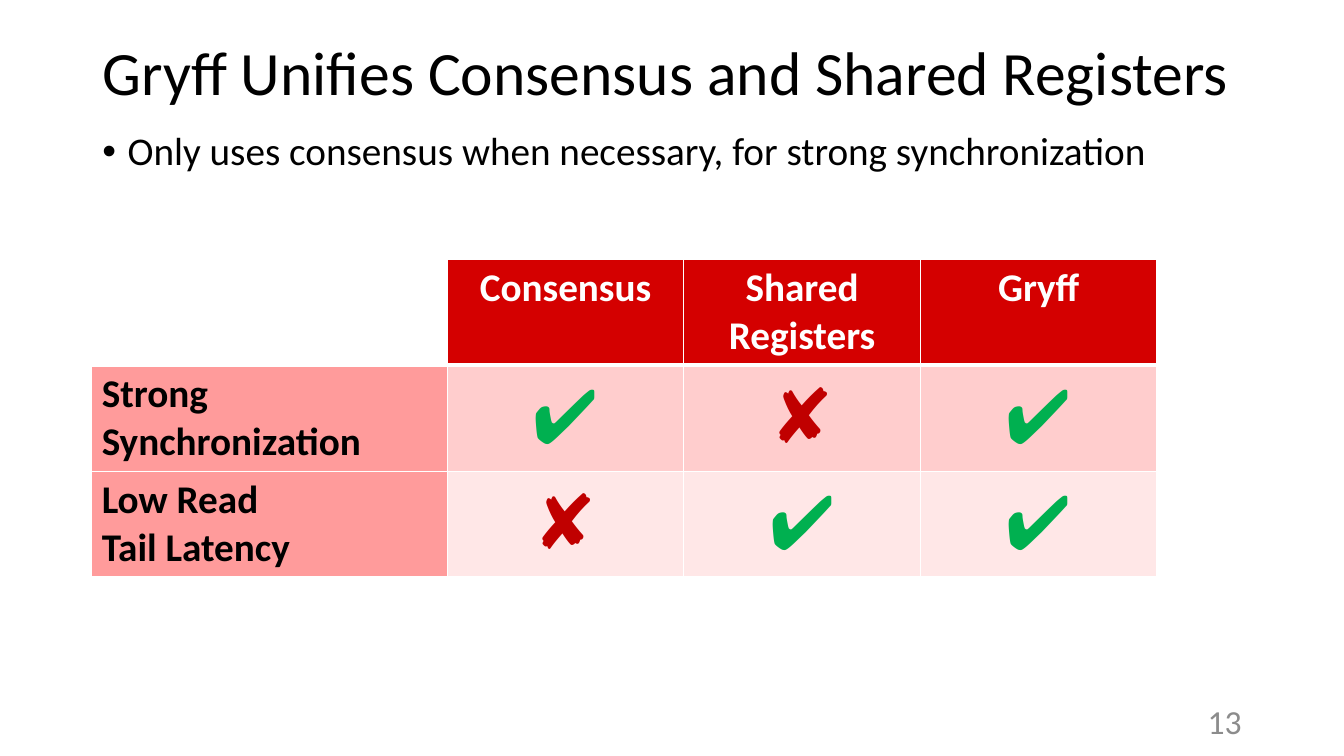
from lxml import etree
from pptx import Presentation
from pptx.dml.color import RGBColor
from pptx.enum.text import MSO_ANCHOR, MSO_AUTO_SIZE, PP_ALIGN
from pptx.oxml.ns import qn
from pptx.util import Pt

LEFT, CENTER, RIGHT = PP_ALIGN.LEFT, PP_ALIGN.CENTER, PP_ALIGN.RIGHT
TOP, MIDDLE = MSO_ANCHOR.TOP, MSO_ANCHOR.MIDDLE
NO_AUTOFIT = MSO_AUTO_SIZE.NONE

FONT = "Calibri"
BLACK = RGBColor(0x00, 0x00, 0x00)
WHITE = RGBColor(0xFF, 0xFF, 0xFF)
GRAY = RGBColor(0x8C, 0x8C, 0x8C)
HEADER_RED = RGBColor(0xD4, 0x00, 0x00)
LABEL_PINK = RGBColor(0xFF, 0x9B, 0x9B)
BAND_PINKS = (RGBColor(0xFF, 0xCD, 0xCD), RGBColor(0xFF, 0xE7, 0xE7))
CHECK, CROSS = "✔", "✘"
MARK_COLORS = {CHECK: RGBColor(0x00, 0xB0, 0x50), CROSS: RGBColor(0xC0, 0x00, 0x00)}

HEADERS = ("Consensus", "Shared Registers", "Gryff")
PROPERTIES = (
    ("Strong Synchronization", (CHECK, CROSS, CHECK)),
    ("Low Read\nTail Latency", (CROSS, CHECK, CHECK)),
)
COLUMN_WIDTHS = (254, 169, 169, 169)
ROW_HEIGHT = 75.6


def place(shape, left, top, width, height):
    shape.left, shape.top = Pt(left), Pt(top)
    shape.width, shape.height = Pt(width), Pt(height)


def write(frame, text, size, color, align=LEFT, bold=False):
    frame.text = text
    for para in frame.paragraphs:
        para.alignment = align
        font = para.font
        font.name, font.size, font.bold = FONT, Pt(size), bold
        font.color.rgb = color


def fill_box(box, text, size, color, anchor, align=LEFT):
    frame = box.text_frame
    frame.word_wrap = True
    frame.auto_size = NO_AUTOFIT
    frame.vertical_anchor = anchor
    write(frame, text, size, color, align)
    return frame.paragraphs[0]


def add_borders(cell, widths):
    properties = cell._tc.get_or_add_tcPr()
    for side, width in widths.items():
        line = etree.SubElement(properties, qn(f"a:ln{side}"), w=str(Pt(width)))
        solid = etree.SubElement(line, qn("a:solidFill"))
        etree.SubElement(solid, qn("a:srgbClr"), val=str(WHITE))


def fill_cell(cell, text, size, color, fill, align, bold=True, anchor=TOP):
    cell.fill.solid()
    cell.fill.fore_color.rgb = fill
    cell.vertical_anchor = anchor
    write(cell.text_frame, text, size, color, align, bold)


def add_comparison(page):
    frame = page.shapes.add_table(
        len(PROPERTIES) + 1, len(COLUMN_WIDTHS), Pt(65.5), Pt(185.2),
        Pt(sum(COLUMN_WIDTHS)), Pt(ROW_HEIGHT * (len(PROPERTIES) + 1)))
    table = frame.table
    for column, width in zip(table.columns, COLUMN_WIDTHS):
        column.width = Pt(width)
    for index, row in enumerate(table.rows):
        row.height = Pt(ROW_HEIGHT)
        for cell in row.cells:
            add_borders(cell, {"L": 1, "R": 1, "T": 3 if index == 1 else 1,
                               "B": 3 if index == 0 else 1})
    table.cell(0, 0).fill.background()
    for column, header in enumerate(HEADERS, 1):
        fill_cell(table.cell(0, column), header, 28, WHITE, HEADER_RED, CENTER)
    for row, (label, marks) in enumerate(PROPERTIES, 1):
        fill_cell(table.cell(row, 0), label, 28, BLACK, LABEL_PINK, LEFT)
        for column, mark in enumerate(marks, 1):
            fill_cell(table.cell(row, column), mark, 54, MARK_COLORS[mark],
                      BAND_PINKS[row - 1], CENTER, False, MIDDLE)


def add_title(page):
    title = page.shapes.title
    place(title, 66, 1.5, 828, 104.5)
    para = fill_box(title, "Gryff Unifies Consensus and Shared Registers", 44, BLACK, MIDDLE)
    para.line_spacing = 0.9


def add_body(page):
    body = page.placeholders[1]
    place(body, 66, 90.5, 828, 343)
    para = fill_box(body, "Only uses consensus when necessary, for strong synchronization",
                    28, BLACK, TOP)
    para.line_spacing = 0.9
    para.space_before = Pt(10)
    properties = para._p.get_or_add_pPr()
    properties.set("marL", str(Pt(18)))
    properties.set("indent", str(-Pt(18)))
    etree.SubElement(properties, qn("a:buFont"), typeface="Arial")
    etree.SubElement(properties, qn("a:buChar"), char="•")
    para.font.size = Pt(28)
    defaults = properties.find(qn("a:defRPr"))
    properties.append(defaults)


def add_page_number(page):
    box = page.shapes.add_textbox(Pt(678), Pt(500.5), Pt(216), Pt(28.75))
    fill_box(box, "13", 24, GRAY, MIDDLE, RIGHT)


def main():
    deck = Presentation()
    deck.slide_width, deck.slide_height = Pt(960), Pt(540)
    page = deck.slides.add_slide(deck.slide_layouts[1])
    add_comparison(page)
    add_title(page)
    add_body(page)
    add_page_number(page)
    deck.save("out.pptx")


if __name__ == "__main__":
    main()
